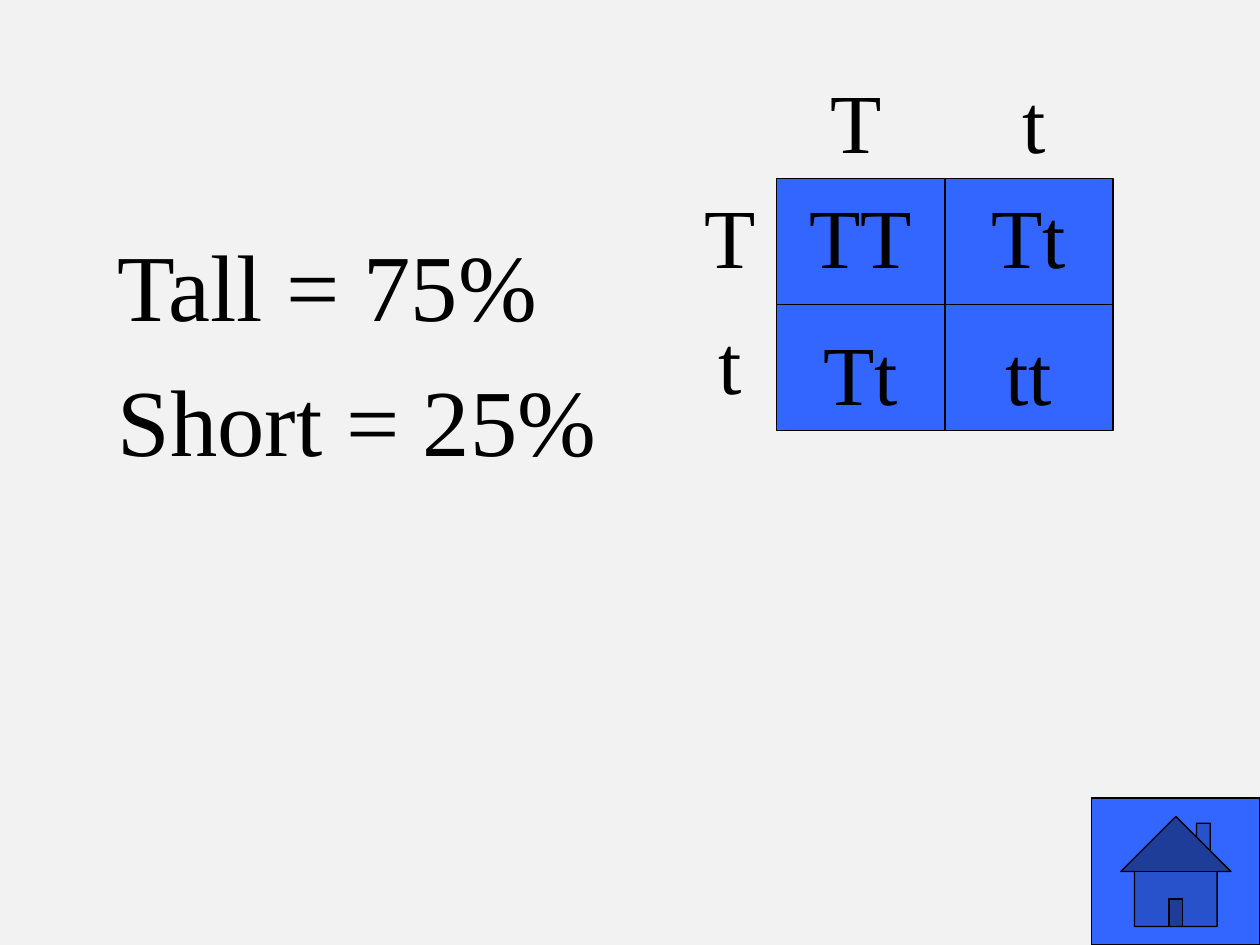
from dataclasses import dataclass

from lxml import etree
from pptx import Presentation
from pptx.dml.color import RGBColor
from pptx.enum.shapes import MSO_CONNECTOR, MSO_SHAPE
from pptx.enum.text import MSO_ANCHOR, MSO_AUTO_SIZE, PP_ALIGN
from pptx.oxml.ns import qn
from pptx.util import Cm, Pt

HOME_BUTTON = MSO_SHAPE.ACTION_BUTTON_HOME
PROCESS = MSO_SHAPE.FLOWCHART_PROCESS
STRAIGHT = MSO_CONNECTOR.STRAIGHT
TOP = MSO_ANCHOR.TOP
NO_AUTOFIT = MSO_AUTO_SIZE.NONE
FIT_SHAPE = MSO_AUTO_SIZE.SHAPE_TO_FIT_TEXT
LEFT, CENTER = PP_ALIGN.LEFT, PP_ALIGN.CENTER


@dataclass(frozen=True)
class Theme:
    font: str = "Times New Roman"
    background: RGBColor = RGBColor(0xF2, 0xF2, 0xF2)
    panel: RGBColor = RGBColor(0x33, 0x66, 0xFF)
    ink: RGBColor = RGBColor(0, 0, 0)
    ratio_size: Pt = Pt(54)
    allele_size: Pt = Pt(48)
    line_width: Pt = Pt(0.75)


theme = Theme()


def style_paragraph(para, size, align, space_before):
    para.alignment = align
    para.space_before = space_before
    for span in para.runs:
        span.font.name = theme.font
        span.font.size = size
        span.font.color.rgb = theme.ink


def add_panel(page, preset, left, top, width, height):
    """Add a blue preset shape with a thin black outline."""
    panel = page.shapes.add_shape(preset, left, top, width, height)
    panel.shadow.inherit = False
    panel.fill.solid()
    panel.fill.fore_color.rgb = theme.panel
    panel.line.color.rgb = theme.ink
    panel.line.width = theme.line_width


deck = Presentation()
deck.slide_width, deck.slide_height = Cm(25.4), Cm(19.05)
page = deck.slides.add_slide(deck.slide_layouts[1])
page.background.fill.solid()
page.background.fill.fore_color.rgb = theme.background

# Phenotype ratios
title = page.shapes.title
title.element.getparent().remove(title.element)
ratios = page.placeholders[1]
ratios.left, ratios.top = Cm(2.12), Cm(4.45)
ratios.width, ratios.height = Cm(10.58), Cm(11)
frame = ratios.text_frame
frame.text = "Tall = 75%\nShort = 25%"
frame.auto_size = NO_AUTOFIT
frame.vertical_anchor = TOP
for para in frame.paragraphs:
    style_paragraph(para, theme.ratio_size, LEFT, Pt(12.5))
    properties = para._p.get_or_add_pPr()
    properties.set("marL", str(Cm(0.95)))
    properties.set("indent", str(-Cm(0.95)))
    etree.SubElement(properties, qn("a:buNone"))

# Home button in the bottom right corner
button_width, button_height = Cm(3.39), Cm(2.96)
add_panel(page, HOME_BUTTON, deck.slide_width - button_width,
          deck.slide_height - button_height, button_width, button_height)

# Punnett square
cell_width, cell_height = Cm(3.39), Cm(2.54)
square_left, square_top = Cm(15.66), Cm(3.6)
square_right = square_left + 2 * cell_width
square_bottom = square_top + 2 * cell_height
middle_x, middle_y = square_left + cell_width, square_top + cell_height
add_panel(page, PROCESS, square_left, square_top, 2 * cell_width, 2 * cell_height)

dividers = [
    (middle_x, square_top, middle_x, square_bottom),
    (square_left, middle_y, square_right, middle_y),
]
for ends in dividers:
    divider = page.shapes.add_connector(STRAIGHT, *ends)
    divider.line.color.rgb = theme.ink
    divider.line.width = theme.line_width
    etree.SubElement(divider._element.spPr, qn("a:effectLst"))

# Alleles of the parents, then the genotypes of the offspring
parent_width = Cm(1.9)
header_top = Cm(1.27)
lower_top = Cm(6.35)
labels = [
    ("T", square_left - parent_width, square_top, parent_width),
    ("t", square_left - parent_width, middle_y, parent_width),
    ("T", Cm(16.3), header_top, parent_width),
    ("t", Cm(19.9), header_top, parent_width),
    ("TT", square_left, square_top, cell_width),
    ("Tt", middle_x, square_top, cell_width),
    ("Tt", square_left, lower_top, cell_width),
    ("tt", middle_x, lower_top, cell_width),
]
for text, left, top, width in labels:
    box = page.shapes.add_textbox(left, top, width, Cm(2.29))
    frame = box.text_frame
    frame.text = text
    frame.word_wrap = True
    frame.auto_size = FIT_SHAPE
    style_paragraph(frame.paragraphs[0], theme.allele_size, CENTER, Pt(24))

deck.save("out.pptx")
